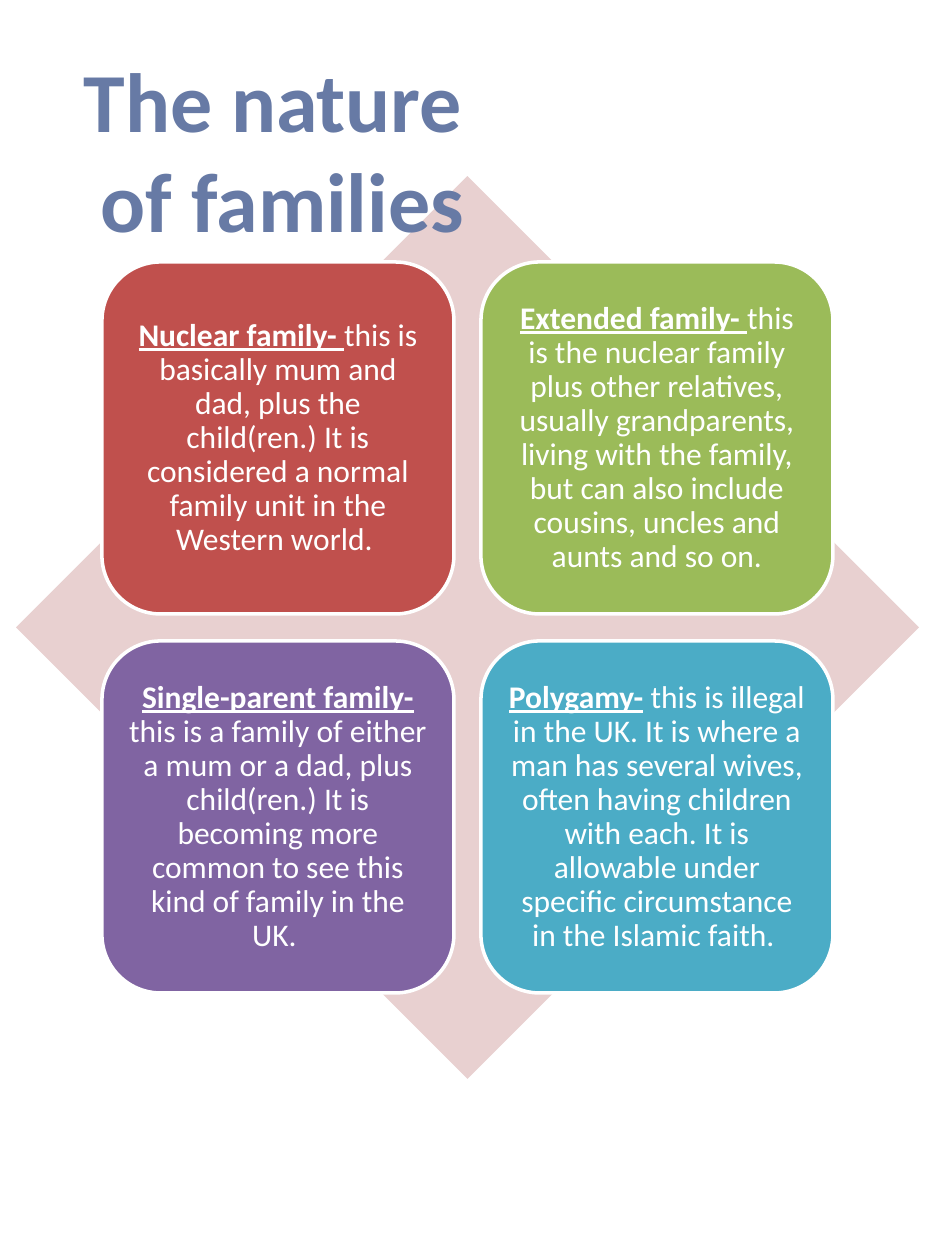
import pptx
import pptx.util
import pptx.dml.color
import pptx.enum.shapes
import pptx.enum.text

TITLE = ["The nature ", "of families"]
FAMILIES = [
    ("Nuclear family- ", "this is basically mum and dad, plus the child(ren.) It is considered a normal family unit in the Western world. ", "red"),
    ("Extended family- ", "this is the nuclear family plus other relatives, usually grandparents, living with the family, but can also include cousins, uncles and aunts and so on.", "green"),
    ("Single-parent family- ", "this is a family of either a mum or a dad, plus child(ren.) It is becoming more common to see this kind of family in the UK. ", "purple"),
    ("Polygamy-", " this is illegal in the UK. It is where a man has several wives, often having children with each. It is allowable under specific circumstance in the Islamic faith. ", "blue"),
]
COLORS = {"red": "C0504D", "green": "9BBB59", "purple": "8064A2", "blue": "4BACC6",
          "diamond": "E8D0D0", "white": "FFFFFF", "title": "677AA5"}
HEADING = {"size": pptx.util.Pt(18), "bold": True, "underline": True}
BODY = {"size": pptx.util.Pt(18), "bold": False, "underline": False}
TITLE_FONT = {"size": pptx.util.Pt(48), "bold": True}
CARD_PARAGRAPH = {"alignment": pptx.enum.text.PP_ALIGN.CENTER, "line_spacing": 0.9,
                  "space_after": pptx.util.Pt(6)}
TITLE_PARAGRAPH = {"alignment": pptx.enum.text.PP_ALIGN.CENTER}
SHAPES = pptx.enum.shapes.MSO_SHAPE
LEFT, TOP, CARD, STEP, INSET = 102, 262, 352, 379, 9


def px(n):
    return pptx.util.Emu(round(n * 914400 / 126))


def rgb(name):
    return pptx.dml.color.RGBColor.from_string(COLORS[name])


def apply(target, values):
    for key, value in values.items():
        setattr(target, key, value)


def add_shape(s, kind, box, fill):
    sp = s.shapes.add_shape(kind, *map(px, box))
    sp.shadow.inherit = False
    sp.fill.solid()
    sp.fill.fore_color.rgb = rgb(fill)
    return sp


def add_run(p, text, font, color):
    r = p.add_run()
    r.text = text
    r.font.name = "Calibri"
    r.font.color.rgb = rgb(color)
    apply(r.font, font)


def add_card(s, index, heading, body, color):
    row, col = divmod(index, 2)
    sp = add_shape(s, SHAPES.ROUNDED_RECTANGLE,
                   (LEFT + col * STEP, TOP + row * STEP, CARD, CARD), color)
    sp.line.color.rgb = rgb("white")
    sp.line.width = pptx.util.Pt(2)
    tf = sp.text_frame
    apply(tf, {"word_wrap": True, "vertical_anchor": pptx.enum.text.MSO_ANCHOR.MIDDLE})
    apply(tf, {f"margin_{side}": px(INSET) for side in ("left", "top", "right", "bottom")})
    p = tf.paragraphs[0]
    apply(p, CARD_PARAGRAPH)
    add_run(p, heading, HEADING, "white")
    add_run(p, body, BODY, "white")


def add_title(s):
    tf = s.shapes.add_textbox(*map(px, (43, 42, 479, 217))).text_frame
    tf.word_wrap = True
    for i, line in enumerate(TITLE):
        p = tf.add_paragraph() if i else tf.paragraphs[0]
        apply(p, TITLE_PARAGRAPH)
        add_run(p, line, TITLE_FONT, "title")


def main():
    prs = pptx.Presentation()
    apply(prs, {"slide_width": px(945), "slide_height": px(1260)})
    s = prs.slides.add_slide(prs.slide_layouts[6])
    add_shape(s, SHAPES.DIAMOND, (16, 176, 903, 903), "diamond").line.fill.background()
    for i, family in enumerate(FAMILIES):
        add_card(s, i, *family)
    add_title(s)
    prs.save("out.pptx")


if __name__ == "__main__":
    main()
